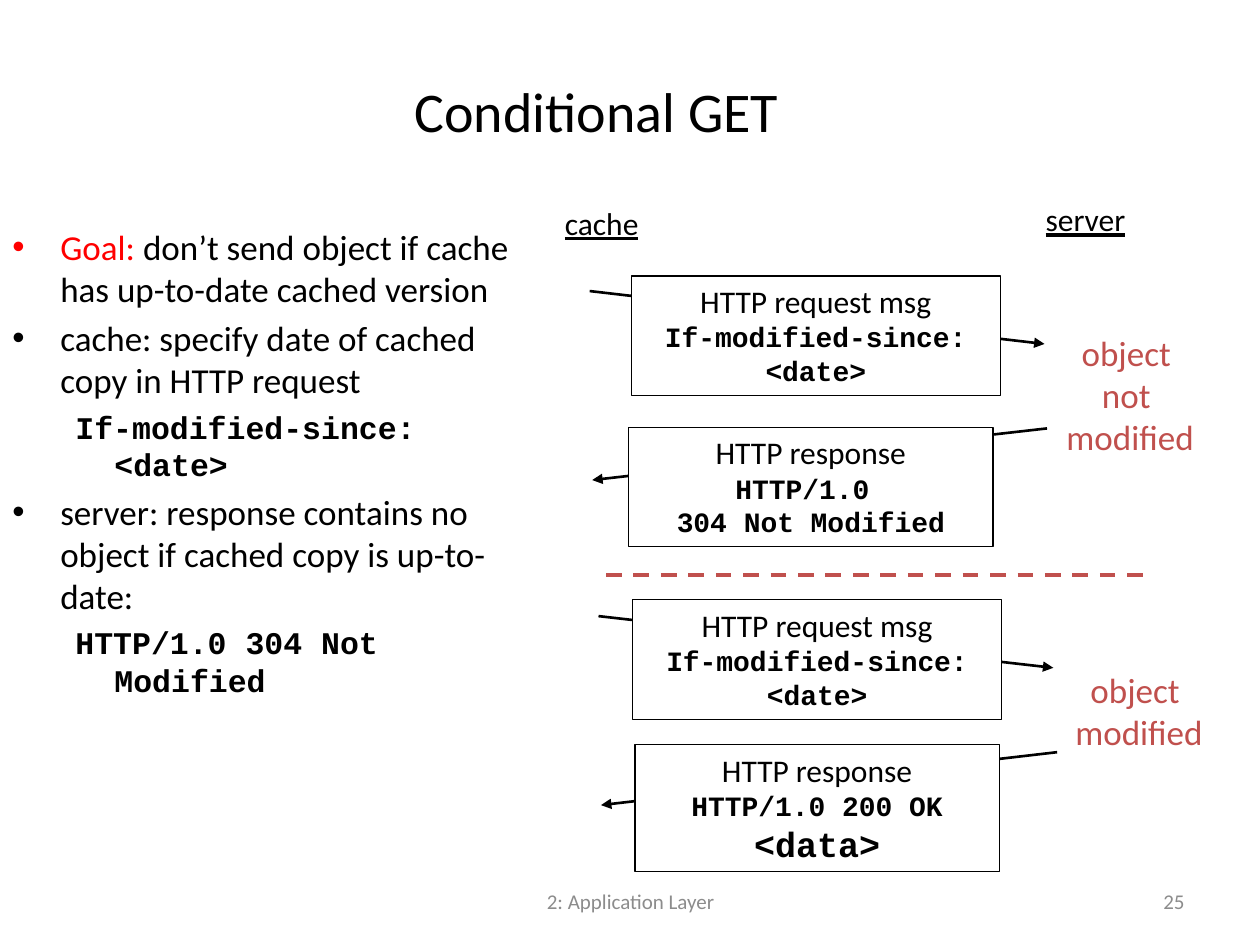
from dataclasses import dataclass

from lxml.etree import SubElement
from pptx import Presentation
from pptx.dml.color import RGBColor
from pptx.enum.dml import MSO_LINE_DASH_STYLE as Dash
from pptx.enum.shapes import MSO_CONNECTOR as Connector, MSO_SHAPE as Shape
from pptx.enum.text import MSO_ANCHOR as Anchor, PP_ALIGN as Align
from pptx.oxml.ns import qn
from pptx.util import Inches, Pt

WIDTH, HEIGHT = Inches(10), Inches(7.5)
COLUMNS, ROWS = 100, 75
BLACK, WHITE, RED, BRICK, GRAY = "000000", "FFFFFF", "FF0000", "C0504D", "8C8C8C"
SANS, MONO = "Calibri", "Courier New"


@dataclass(frozen=True)
class Area:
    """A rectangle in grid columns and rows."""
    column: float
    row: float
    columns: float
    rows: float


@dataclass(frozen=True)
class Run:
    """A piece of text with one look."""
    text: str
    size: float = 18
    name: str = SANS
    color: str = BLACK
    bold: bool = False
    underline: bool = False


@dataclass(frozen=True)
class Item:
    """A paragraph of the left-hand explanation."""
    runs: tuple[Run, ...]
    margin: float = 0.38
    indent: float = -0.38
    bullet: str = "•"


@dataclass(frozen=True)
class Label:
    """A free-standing text, one run per paragraph."""
    area: Area
    lines: tuple[Run, ...]
    align: Align = Align.CENTER
    anchor: Anchor = Anchor.TOP
    wrap: bool = False


@dataclass(frozen=True)
class Message:
    """An arrow between cache and server with its message box."""
    start: tuple[float, float]
    end: tuple[float, float]
    area: Area
    lines: tuple[Run, ...]


def code(text: str, size: float = 16) -> Run:
    """Return a bold monospaced run."""
    return Run(text, size, MONO, bold=True)


def paint(value: str) -> RGBColor:
    """Turn a hex string into a colour."""
    return RGBColor.from_string(value)


def across(columns: float) -> int:
    """Convert grid columns to a length."""
    return round(WIDTH * columns / COLUMNS)


def down(rows: float) -> int:
    """Convert grid rows to a length."""
    return round(HEIGHT * rows / ROWS)


def place(area: Area) -> tuple[int, int, int, int]:
    """Return left, top, width and height of an area."""
    return across(area.column), down(area.row), across(area.columns), down(area.rows)


def apply(target, formats: dict) -> None:
    """Set every attribute named in the formats."""
    for key, value in formats.items():
        setattr(target, key, value)


def add_run(paragraph, run: Run) -> None:
    """Append a formatted run to a paragraph."""
    piece = paragraph.add_run()
    piece.text = run.text
    apply(piece.font, {"size": Pt(run.size), "name": run.name, "bold": run.bold,
                       "underline": run.underline})
    piece.font.color.rgb = paint(run.color)


def next_paragraph(frame, index: int):
    """Return the first paragraph or a new one."""
    return frame.add_paragraph() if index else frame.paragraphs[0]


def write_lines(frame, lines: tuple[Run, ...], align: Align) -> None:
    """Write one aligned paragraph per run."""
    for index, run in enumerate(lines):
        paragraph = next_paragraph(frame, index)
        paragraph.alignment = align
        add_run(paragraph, run)


def add_label(slide, label: Label) -> None:
    """Draw a text box."""
    frame = slide.shapes.add_textbox(*place(label.area)).text_frame
    apply(frame, {"word_wrap": label.wrap, "vertical_anchor": label.anchor})
    write_lines(frame, label.lines, label.align)


def add_items(slide, area: Area, items: tuple[Item, ...]) -> None:
    """Draw the bulleted explanation."""
    frame = slide.shapes.add_textbox(*place(area)).text_frame
    frame.word_wrap = True
    for index, item in enumerate(items):
        paragraph = next_paragraph(frame, index)
        paragraph.space_before = Pt(4)
        properties = paragraph._p.get_or_add_pPr()
        properties.set("marL", str(Inches(item.margin)))
        properties.set("indent", str(Inches(item.indent)))
        if item.bullet:
            SubElement(properties, qn("a:buFont"), typeface="Arial")
            SubElement(properties, qn("a:buChar"), char=item.bullet)
        for run in item.runs:
            add_run(paragraph, run)


def add_line(slide, start: tuple[float, float], end: tuple[float, float],
             color: str, width: float):
    """Draw a straight line without shadow."""
    connector = slide.shapes.add_connector(
        Connector.STRAIGHT, across(start[0]), down(start[1]), across(end[0]), down(end[1]))
    connector.line.color.rgb = paint(color)
    connector.line.width = Pt(width)
    SubElement(connector._element.spPr, qn("a:effectLst"))
    return connector


def add_message(slide, message: Message) -> None:
    """Draw an arrow and the message box over it."""
    arrow = add_line(slide, message.start, message.end, BLACK, 1.5)
    SubElement(arrow.line._get_or_add_ln(), qn("a:tailEnd"), type="triangle")
    box = slide.shapes.add_shape(Shape.RECTANGLE, *place(message.area))
    box.shadow.inherit = False
    box.fill.solid()
    box.fill.fore_color.rgb = paint(WHITE)
    box.line.color.rgb = paint(BLACK)
    box.line.width = Pt(0.75)
    apply(box.text_frame, {"word_wrap": True, "vertical_anchor": Anchor.TOP})
    write_lines(box.text_frame, message.lines, Align.CENTER)


REQUEST = (Run("HTTP request msg"), code("If-modified-since: <date>"))
RESPONSE = Run("HTTP response")

ITEMS = (
    Item((Run("Goal:", 20, color=RED),
          Run(" don’t send object if cache has up-to-date cached version", 20))),
    Item((Run("cache: specify date of cached copy in HTTP request", 20),)),
    Item((code("If-modified-since: <date>", 18),), 0.81, -0.31, ""),
    Item((Run("server: response contains no object if cached copy is up-to-date:", 20),)),
    Item((code("HTTP/1.0 304 Not Modified", 18),), 0.81, -0.31, ""),
)

MESSAGES = (
    Message((46.8, 23.1), (82.9, 27.3), Area(50.1, 21.9, 29.3, 9.5), REQUEST),
    Message((83.1, 34), (47, 38.1), Area(49.9, 33.9, 28.9, 9.5),
            (RESPONSE, code("HTTP/1.0 "), code("304 Not Modified"))),
    Message((47.5, 48.9), (83.6, 53), Area(50.2, 47.6, 29.3, 9.5), REQUEST),
    Message((83.9, 59.7), (47.7, 63.9), Area(50.4, 59.1, 28.9, 10.1),
            (RESPONSE, code("HTTP/1.0 200 OK"), code("<data>", 20))),
)

LABELS = (
    Label(Area(3.8, 2.5, 87.1, 12.5), (Run("Conditional GET", 32),),
          anchor=Anchor.MIDDLE, wrap=True),
    Label(Area(42.3, 15.7, 10.9, 5), (Run("cache", underline=True),)),
    Label(Area(80.1, 15.4, 12.1, 5), (Run("server", underline=True),)),
    Label(Area(83, 25.8, 13.4, 11),
          tuple(Run(word, 20, color=BRICK) for word in ("object ", "not ", "modified"))),
    Label(Area(83.7, 52.6, 13.4, 7.7),
          tuple(Run(word, 20, color=BRICK) for word in ("object ", "modified"))),
    Label(Area(34.2, 69.5, 31.7, 4), (Run("2: Application Layer", 12, color=GRAY),),
          anchor=Anchor.MIDDLE, wrap=True),
    Label(Area(71.7, 69.5, 23.3, 4), (Run("25", 12, color=GRAY),),
          Align.RIGHT, Anchor.MIDDLE, True),
)


def main() -> None:
    """Build and save the slide."""
    presentation = Presentation()
    apply(presentation, {"slide_width": WIDTH, "slide_height": HEIGHT})
    slide = presentation.slides.add_slide(presentation.slide_layouts[6])
    add_items(slide, Area(0, 17.4, 44.2, 47.1), ITEMS)
    for message in MESSAGES:
        add_message(slide, message)
    add_line(slide, (48.1, 45.6), (90.8, 45.6), BRICK, 2.25).line.dash_style = Dash.DASH
    for label in LABELS:
        add_label(slide, label)
    presentation.save("out.pptx")


if __name__ == "__main__":
    main()
